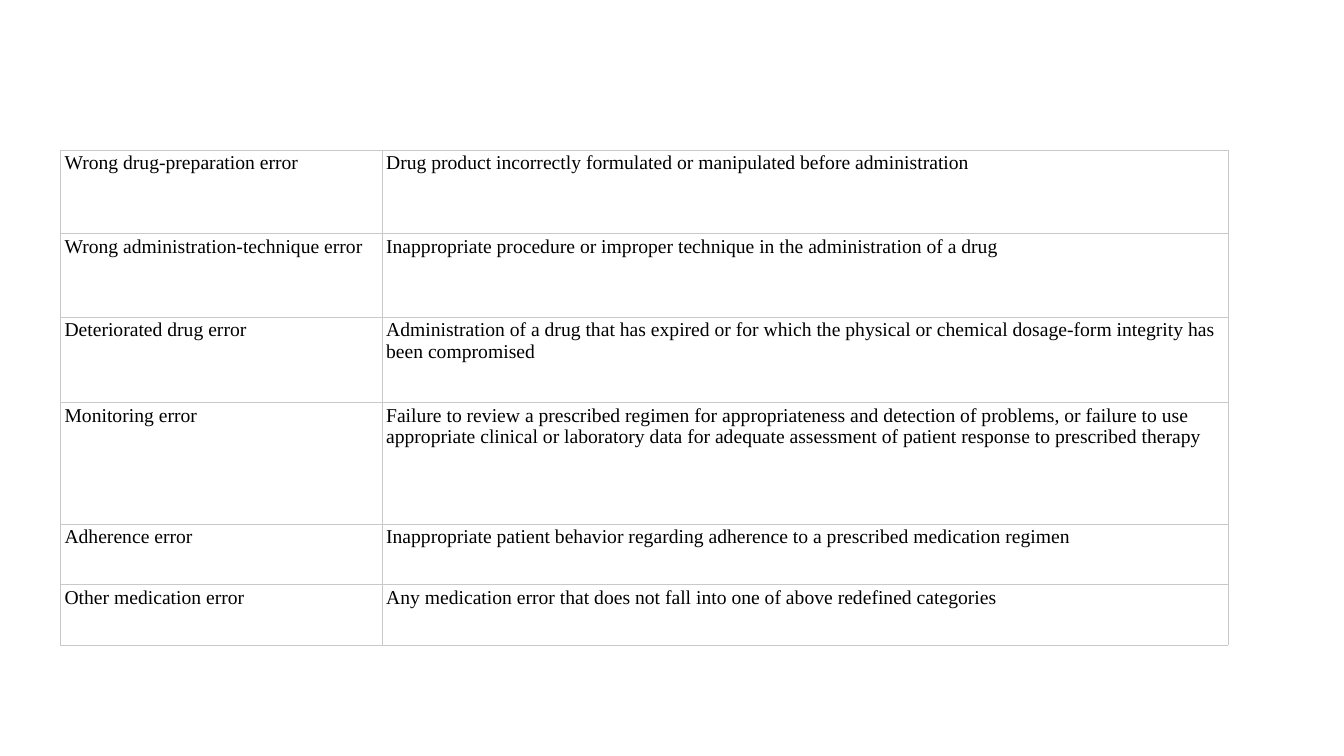
from lxml.etree import SubElement
from pptx import Presentation
from pptx.dml.color import RGBColor
from pptx.enum.text import MSO_ANCHOR
from pptx.oxml.ns import qn
from pptx.util import Inches, Pt

BLACK = RGBColor(0x00, 0x00, 0x00)
GRID_GREY = RGBColor(0xC9, 0xC9, 0xC9)
BLANK_LAYOUT = 6

COLUMN_WIDTHS = (3.19, 8.39)
CELL_FORMAT = {
    "margin_left": Inches(0.04),
    "margin_right": Inches(0.04),
    "margin_top": Inches(0.02),
    "margin_bottom": Inches(0.02),
    "vertical_anchor": MSO_ANCHOR.TOP,
}
FONT_FORMAT = {"name": "Times New Roman", "size": Pt(14), "bold": False}

# Row height, error type, definition
ERROR_TYPES = (
    (0.83, "Wrong drug-preparation error",
     "Drug product incorrectly formulated or manipulated before administration"),
    (0.83, "Wrong administration-technique error",
     "Inappropriate procedure or improper technique in the administration of a drug"),
    (0.85, "Deteriorated drug error",
     "Administration of a drug that has expired or for which the physical or "
     "chemical dosage-form integrity has been compromised"),
    (1.21, "Monitoring error",
     "Failure to review a prescribed regimen for appropriateness and detection of "
     "problems, or failure to use appropriate clinical or laboratory data for "
     "adequate assessment of patient response to prescribed therapy"),
    (0.6, "Adherence error",
     "Inappropriate patient behavior regarding adherence to a prescribed "
     "medication regimen"),
    (0.6, "Other medication error",
     "Any medication error that does not fall into one of above redefined categories"),
)


def apply_format(target, values):
    for name, value in values.items():
        setattr(target, name, value)


def add_borders(cell):
    """Draw all four borders; the schema wants them ahead of the cell's fill."""
    properties = cell._tc.get_or_add_tcPr()
    for position, side in enumerate(("a:lnL", "a:lnR", "a:lnT", "a:lnB")):
        border = SubElement(properties, qn(side), w=str(Pt(0.6)))
        fill = SubElement(border, qn("a:solidFill"))
        SubElement(fill, qn("a:srgbClr"), val=str(GRID_GREY))
        properties.insert(position, border)


def fill_cell(cell, wording):
    cell.text = wording
    apply_format(cell, CELL_FORMAT)
    font = cell.text_frame.paragraphs[0].runs[0].font
    apply_format(font, FONT_FORMAT)
    font.color.rgb = BLACK
    cell.fill.background()
    add_borders(cell)


def add_error_table(slide, left, top, width, height):
    table = slide.shapes.add_table(
        len(ERROR_TYPES), len(COLUMN_WIDTHS),
        Inches(left), Inches(top), Inches(width), Inches(height)).table
    apply_format(table, {"first_row": False, "horz_banding": False})
    for column, share in zip(table.columns, COLUMN_WIDTHS):
        column.width = Inches(width * share / sum(COLUMN_WIDTHS))
    total_height = sum(row_height for row_height, *_ in ERROR_TYPES)
    for row, (row_height, *wordings) in zip(table.rows, ERROR_TYPES):
        row.height = Inches(height * row_height / total_height)
        for cell, wording in zip(row.cells, wordings):
            fill_cell(cell, wording)


def main():
    presentation = Presentation()
    presentation.slide_width = Inches(13.33)
    presentation.slide_height = Inches(7.5)
    slide = presentation.slides.add_slide(presentation.slide_layouts[BLANK_LAYOUT])
    add_error_table(slide, left=0.6, top=1.49, width=11.58, height=4.91)
    presentation.save("out.pptx")


if __name__ == "__main__":
    main()
